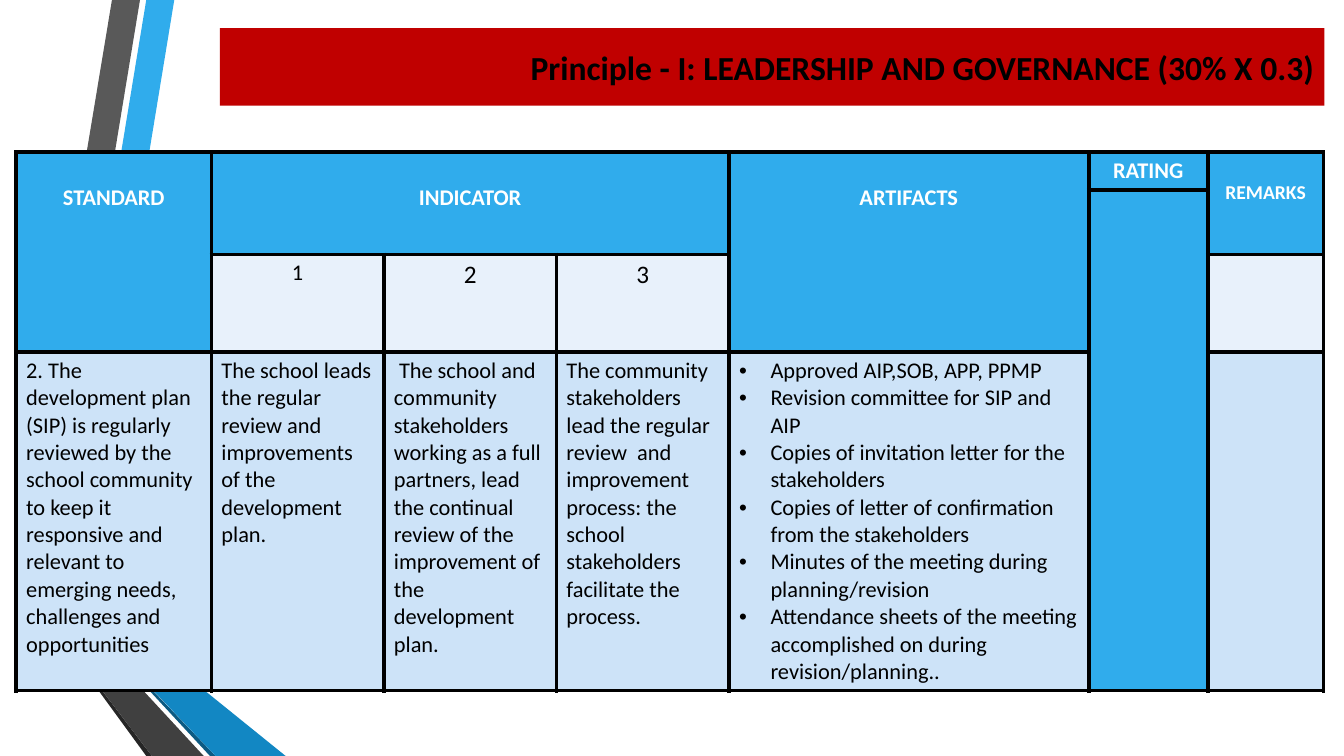
from pptx import Presentation
from pptx.dml.color import RGBColor
from pptx.enum import text as t
from pptx.oxml import parse_xml
from pptx.oxml.ns import nsdecls
from pptx.util import Pt

FONT = "Calibri"
BLUE, PALE, LIGHT = "30ACEC", "E8F1FB", "CDE3F8"
BLACK, WHITE, RED = "000000", "FFFFFF", "C00000"

# Ribbon outlines as (colour, corner points)
RIBBONS = [
    (BLUE, [(36, 416), (55.5, 420), (124.5, 0), (104.5, 0)]),
    ("595959", [(100, 0), (80, 0), (11.5, 412.5), (31.5, 415.5)]),
    ("262626", [(11.5, 412.5), (104.5, 540), (108.5, 540)]),
    ("0C5A82", [(36, 417), (150, 540), (154, 540)]),
    ("1287C3", [(36, 416), (154, 540), (204, 540), (55.5, 420)]),
    ("404040", [(145.5, 540), (34.5, 420), (31.5, 415.5), (11.5, 412.5), (108.5, 540)]),
]

COLUMNS = [139.5, 123.25, 123.25, 123.25, 257, 85, 82.75]
ROWS = [27, 46, 69.5, 242]

# Header blocks: row, column, last row, last column, label, size, line spacing
HEADERS = [
    (0, 0, 2, 0, "STANDARD", 16, 2.0),
    (0, 1, 1, 3, "INDICATOR", 16, 2.0),
    (0, 4, 2, 4, "ARTIFACTS", 16, 2.0),
    (0, 5, 0, 5, "RATING", 16, 1.0),
    (0, 6, 1, 6, "REMARKS", 14, 2.0),
    (1, 5, 3, 5, "", 16, 1.0),
]
LEVELS = [("1", 16), ("2", 18), ("3", 18)]
DESCRIPTIONS = [
    "2. The development plan (SIP) is regularly reviewed by the school community to keep it "
    "responsive and relevant to emerging needs, challenges and opportunities",
    "The school leads the regular review and improvements of the development plan.",
    " The school and community stakeholders working as a full partners, lead the continual "
    "review of the improvement of the development plan.",
    "The community stakeholders lead the regular review  and improvement process: the school "
    "stakeholders facilitate the process.",
]
ARTIFACTS = [
    "Approved AIP,SOB, APP, PPMP",
    "Revision committee for SIP and AIP",
    "Copies of invitation letter for the stakeholders",
    "Copies of letter of confirmation from the stakeholders",
    "Minutes of the meeting during planning/revision",
    "Attendance sheets of the meeting accomplished on during revision/planning..",
]


def paint(fill, colour):
    fill.solid()
    fill.fore_color.rgb = RGBColor.from_string(colour)


def write(frame, content, size, colour=BLACK, bold=False, align=t.PP_ALIGN.LEFT, spacing=1.0):
    frame.text = content
    for para in frame.paragraphs:
        para.alignment = align
        para.line_spacing = spacing
        para.font.size = Pt(size)
        for span in para.runs:
            span.font.name = FONT
            span.font.size = Pt(size)
            span.font.bold = bold
            span.font.color.rgb = RGBColor.from_string(colour)


def add_bullets(frame, indent):
    for para in frame.paragraphs:
        properties = para._p.get_or_add_pPr()
        properties.set("marL", str(Pt(indent)))
        properties.set("indent", str(-Pt(indent)))
        properties.append(parse_xml(f'<a:buFont {nsdecls("a")} typeface="Arial"/>'))
        properties.append(parse_xml(f'<a:buChar {nsdecls("a")} char="•"/>'))


def add_borders(cell, width):
    properties = cell._tc.get_or_add_tcPr()
    for index, side in enumerate(("lnL", "lnR", "lnT", "lnB")):
        properties.insert(index, parse_xml(
            f'<a:{side} {nsdecls("a")} w="{Pt(width)}"><a:solidFill>'
            f'<a:srgbClr val="{BLACK}"/></a:solidFill></a:{side}>'))


def add_ribbon(page, colour, points):
    corners = [(Pt(x), Pt(y)) for x, y in points]
    builder = page.shapes.build_freeform(*corners[0])
    builder.add_line_segments(corners[1:], close=True)
    ribbon = builder.convert_to_shape()
    ribbon.shadow.inherit = False
    paint(ribbon.fill, colour)
    ribbon.line.fill.background()


def add_title(page, content):
    title = page.shapes.title
    title.left, title.top, title.width, title.height = Pt(157), Pt(20), Pt(789), Pt(55.5)
    paint(title.fill, RED)
    write(title.text_frame, content, 24, bold=True, align=t.PP_ALIGN.RIGHT)
    title.text_frame.vertical_anchor = t.MSO_ANCHOR.MIDDLE


def add_rating_table(page):
    table = page.shapes.add_table(len(ROWS), len(COLUMNS), Pt(11.5), Pt(108.5),
                                  Pt(sum(COLUMNS)), Pt(sum(ROWS))).table
    table.first_row = table.horz_banding = False
    for column, width in zip(table.columns, COLUMNS):
        column.width = Pt(width)
    for row, height in zip(table.rows, ROWS):
        row.height = Pt(height)

    # Fills and borders
    for row, colour in zip(table.rows, (BLUE, BLUE, PALE, LIGHT)):
        for cell in row.cells:
            paint(cell.fill, colour)
            add_borders(cell, 3)

    # Header blocks
    for top, left, bottom, right, label, size, spacing in HEADERS:
        cell = table.cell(top, left)
        if (top, left) != (bottom, right):
            cell.merge(table.cell(bottom, right))
        write(cell.text_frame, label, size, WHITE, True, t.PP_ALIGN.CENTER, spacing)

    # Indicator levels, descriptions and artifacts
    for column, (level, size) in enumerate(LEVELS, 1):
        write(table.cell(2, column).text_frame, level, size, align=t.PP_ALIGN.CENTER)
    for column, description in enumerate(DESCRIPTIONS):
        write(table.cell(3, column).text_frame, description, 16)
    artifacts = table.cell(3, 4).text_frame
    write(artifacts, "\n".join(ARTIFACTS), 16)
    add_bullets(artifacts, 22.5)


def main():
    deck = Presentation()
    deck.slide_width, deck.slide_height = Pt(960), Pt(540)
    page = deck.slides.add_slide(deck.slide_layouts[5])
    for colour, points in RIBBONS:
        add_ribbon(page, colour, points)
    add_title(page, "Principle - I: LEADERSHIP AND GOVERNANCE (30% X 0.3)")
    add_rating_table(page)
    deck.save("out.pptx")


if __name__ == "__main__":
    main()
